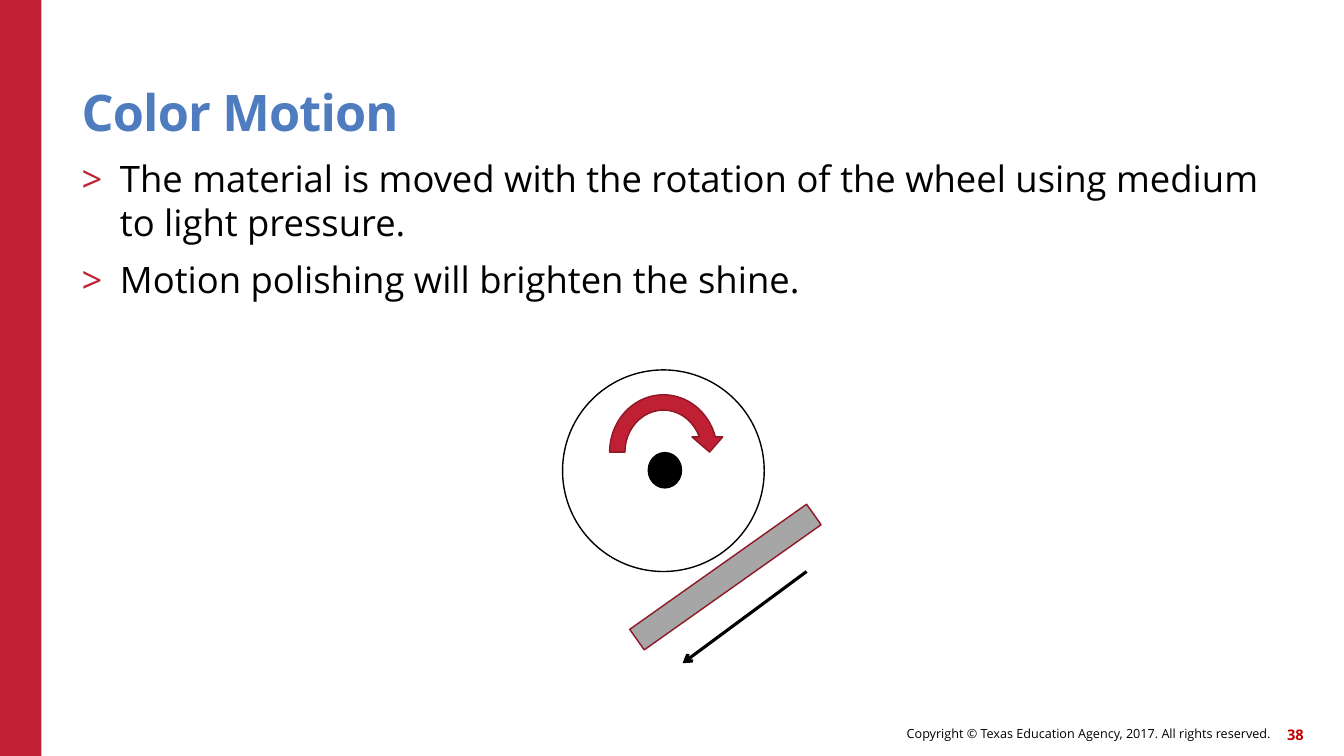
import pptx
import pptx.util
import pptx.dml.color
import pptx.enum.shapes
import pptx.enum.text
from lxml import etree
from pptx.oxml.ns import qn

Inches = pptx.util.Inches
Pt = pptx.util.Pt
Shape = pptx.enum.shapes.MSO_SHAPE
Align = pptx.enum.text.PP_ALIGN
Anchor = pptx.enum.text.MSO_ANCHOR

COLORS = {
    "red": "C02033",
    "dark red": "8E1826",
    "number": "C00000",
    "blue": "4E7CBE",
    "gray": "A6A6A6",
    "black": "000000",
    "white": "FFFFFF",
}


def rgb(name):
    return pptx.dml.color.RGBColor.from_string(COLORS[name])


class SlideBuilder:
    font_name = "Open Sans"

    def __init__(self, page):
        self.page = page

    def shape(self, kind, left, top, width, height, fill, line=None, rotation=0):
        shape = self.page.shapes.add_shape(
            kind, Inches(left), Inches(top), Inches(width), Inches(height))
        shape.shadow.inherit = False
        shape.rotation = rotation
        shape.fill.solid()
        shape.fill.fore_color.rgb = rgb(fill)
        if line:
            shape.line.color.rgb = rgb(line)
            shape.line.width = Pt(1)
        else:
            shape.line.fill.background()
        return shape

    def text(self, left, top, width, height, lines, size, color="black", bold=False,
             align=Align.LEFT, anchor=Anchor.MIDDLE, bullet=None):
        box = self.page.shapes.add_textbox(
            Inches(left), Inches(top), Inches(width), Inches(height))
        frame = box.text_frame
        frame.word_wrap = True
        frame.vertical_anchor = anchor
        frame.margin_left = frame.margin_right = 0
        frame.margin_top = frame.margin_bottom = 0
        frame.text = "\n".join(lines)
        for index, para in enumerate(frame.paragraphs):
            para.alignment = align
            if index:
                para.space_before = Pt(10)
            if bullet:
                self.bullet(para, bullet)
            for span in para.runs:
                span.font.name = self.font_name
                span.font.size = Pt(size)
                span.font.bold = bold
                span.font.color.rgb = rgb(color)
        return box

    def bullet(self, para, mark):
        properties = para._p.get_or_add_pPr()
        properties.set("marL", str(Inches(0.38)))
        properties.set("indent", str(-Inches(0.38)))
        color = etree.SubElement(properties, qn("a:buClr"))
        etree.SubElement(color, qn("a:srgbClr"), val=COLORS["red"])
        etree.SubElement(properties, qn("a:buFont"), typeface=self.font_name)
        etree.SubElement(properties, qn("a:buChar"), char=mark)

    def arrow(self, start, end, color, width):
        points = [Inches(value) for value in (*start, *end)]
        line = self.page.shapes.add_connector(
            pptx.enum.shapes.MSO_CONNECTOR.STRAIGHT, *points)
        line.line.color.rgb = rgb(color)
        line.line.width = Pt(width)
        etree.SubElement(line.line._get_or_add_ln(), qn("a:tailEnd"), type="arrow")
        etree.SubElement(line._element.spPr, qn("a:effectLst"))


def main():
    deck = pptx.Presentation()
    deck.slide_width = Inches(13.33)
    deck.slide_height = Inches(7.5)
    builder = SlideBuilder(deck.slides.add_slide(deck.slide_layouts[6]))

    # Side band and footer
    builder.shape(Shape.RECTANGLE, 0, 0, 0.41, 7.5, "red")
    builder.text(6.14, 7.12, 6.46, 0.32,
                 ["Copyright © Texas Education Agency, 2017. All rights reserved."],
                 9, align=Align.RIGHT)
    builder.text(12.51, 7.13, 0.42, 0.32, ["38"], 10.5, "number", True, Align.RIGHT)

    # Title and bullets
    title = builder.text(0.81, 0.45, 11, 0.96, ["Color Motion"], 36, "blue", True,
                         anchor=Anchor.BOTTOM)
    heading = title.text_frame.paragraphs[0]
    heading.line_spacing = 0.9
    heading.runs[0].font._element.set("spc", "-60")
    builder.text(0.81, 1.55, 12.09, 5.18, [
        "The material is moved with the rotation of the wheel using medium "
        "to light pressure.",
        "Motion polishing will brighten the shine.",
    ], 26, anchor=Anchor.TOP, bullet=">")

    # Wheel with its axle and direction of rotation
    builder.shape(Shape.OVAL, 5.58, 3.67, 2, 2, "white", "black")
    builder.shape(Shape.OVAL, 6.43, 4.49, 0.33, 0.35, "black", "black")
    builder.shape(Shape.CIRCULAR_ARROW, 5.97, 3.84, 1.22, 1.29, "red", "dark red")

    # Material and its direction of travel
    builder.shape(Shape.RECTANGLE, 6.12, 5.6, 2.15, 0.25, "gray", "dark red", 324.7)
    builder.arrow((8, 5.67), (6.77, 6.58), "black", 2.25)

    deck.save("out.pptx")


if __name__ == "__main__":
    main()
